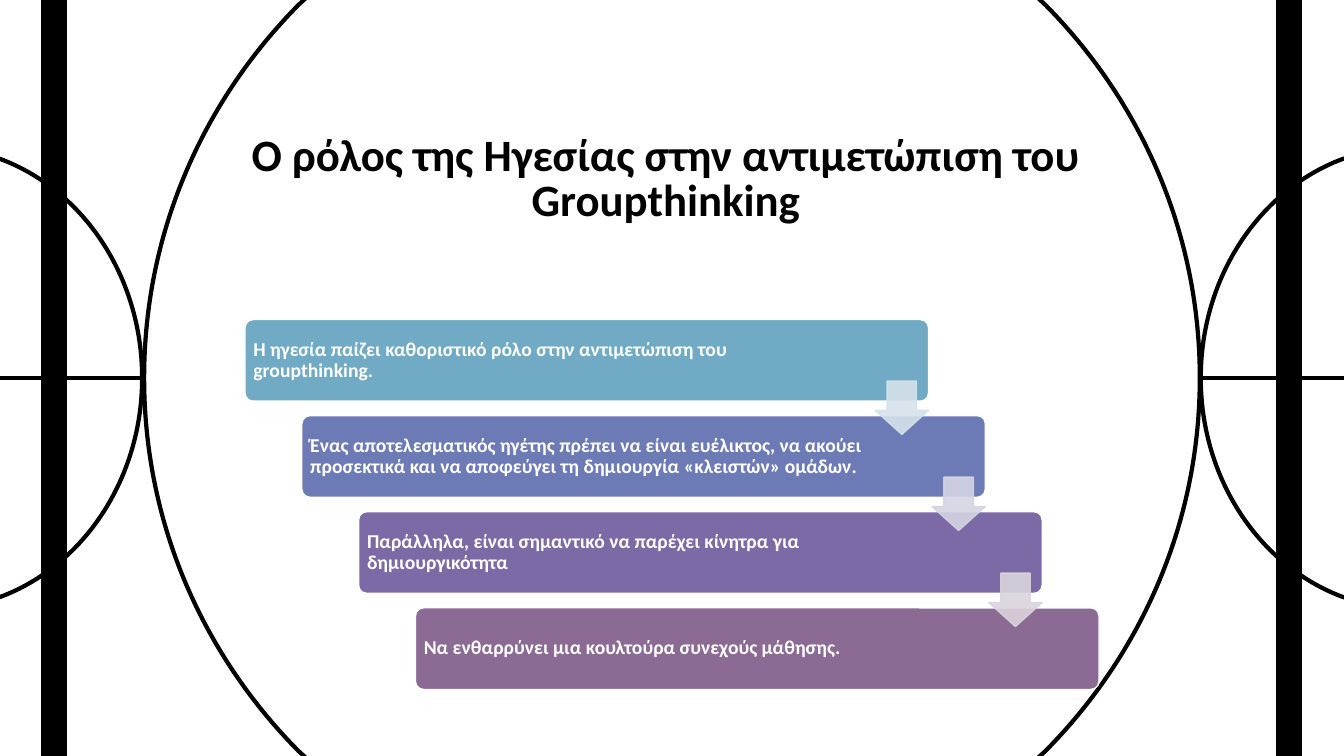
from dataclasses import dataclass

from lxml.etree import SubElement
from pptx import Presentation
from pptx.dml.color import RGBColor
from pptx.enum.shapes import MSO_CONNECTOR as Connector, MSO_SHAPE as Shape
from pptx.enum.text import MSO_ANCHOR as Anchor, MSO_AUTO_SIZE as AutoSize, PP_ALIGN as Align
from pptx.oxml.ns import qn
from pptx.util import Inches, Pt

Point = tuple[float, float]

COLORS = {
    "black": "000000", "white": "FFFFFF",
    "teal": "70AAC4", "blue": "6C7BB6", "purple": "7C6AA6", "plum": "8B6A94",
    "pale_teal": "D5E2EA", "pale_blue": "D5D4E3", "pale_purple": "DAD4DC",
}
FONT = "Calibri"
MIDDLE = 3.75
FIRST_LEFT, FIRST_TOP = 2.43, 3.17
LAST_LEFT, LAST_TOP = 4.12, 6.03


@dataclass
class Step:
    text: str
    fill: str
    arrow: str | None = None


@dataclass
class Outline:
    start: Point
    segments: list[list[Point]]

    def mirrored(self) -> "Outline":
        return Outline(mirror(self.start),
                       [[mirror(point) for point in segment] for segment in self.segments])


def mirror(point: Point) -> Point:
    return 13.32 - point[0], point[1]


STEPS = [
    Step("Η ηγεσία παίζει καθοριστικό ρόλο στην αντιμετώπιση του groupthinking.",
         "teal", "pale_teal"),
    Step("Ένας αποτελεσματικός ηγέτης πρέπει να είναι ευέλικτος, να ακούει προσεκτικά "
         "και να αποφεύγει τη δημιουργία «κλειστών» ομάδων.", "blue", "pale_blue"),
    Step("Παράλληλα, είναι σημαντικό να παρέχει κίνητρα για δημιουργικότητα",
         "purple", "pale_purple"),
    Step("Nα ενθαρρύνει μια κουλτούρα συνεχούς μάθησης.", "plum"),
]
SIDE_CIRCLE = Outline((-0.09, 1.55), [
    [(0.01, 1.58)],
    [(0.83, 1.89), (1.41, 2.75), (1.41, 3.75)],
    [(1.41, 4.75), (0.83, 5.61), (0.01, 5.92)],
    [(-0.09, 5.95)],
])
CENTER_CIRCLE = Outline((3.1, -0.08), [
    [(10.23, -0.08)],
    [(10.37, 0.05)],
    [(11.31, 1), (11.9, 2.3), (11.9, 3.75)],
    [(11.9, 5.2), (11.31, 6.5), (10.37, 7.45)],
    [(10.25, 7.56)],
    [(3.08, 7.56)],
    [(2.96, 7.45)],
    [(2.02, 6.5), (1.43, 5.2), (1.43, 3.75)],
    [(1.43, 2.3), (2.02, 1), (2.96, 0.05)],
])


def color(name: str) -> RGBColor:
    return RGBColor.from_string(COLORS[name])


def paint(shape, fill: str, line: str, opacity: int = 100) -> None:
    shape.shadow.inherit = False
    shape.fill.solid()
    shape.fill.fore_color.rgb = color(fill)
    shape.line.color.rgb = color(line)
    shape.line.width = Pt(1)
    if opacity < 100:
        for element in shape._element.spPr.iter(qn("a:srgbClr")):
            SubElement(element, qn("a:alpha")).set("val", str(opacity * 1000))


def write(frame, text: str, size: int, font_color: str, align: Align, spacing: float,
          insets: tuple[float, float, float, float]) -> None:
    frame.word_wrap = True
    frame.auto_size = AutoSize.NONE
    frame.vertical_anchor = Anchor.MIDDLE
    frame.margin_left, frame.margin_top, frame.margin_right, frame.margin_bottom = map(Inches, insets)
    paragraph = frame.paragraphs[0]
    paragraph.alignment = align
    paragraph.line_spacing = spacing
    run = paragraph.add_run()
    run.text = text
    run.font.name = FONT
    run.font.size = Pt(size)
    run.font.bold = True
    run.font.color.rgb = color(font_color)


def draw_bar(slide, left: float) -> None:
    bar = slide.shapes.add_shape(Shape.RECTANGLE, Inches(left), 0, Inches(0.25), Inches(7.5))
    paint(bar, "black", "black")


def draw_outline(slide, outline: Outline) -> None:
    builder = slide.shapes.build_freeform(*map(Inches, outline.start))
    builder.add_line_segments(
        [(Inches(x), Inches(y)) for segment in outline.segments for x, y in segment], close=True)
    curve = builder.convert_to_shape()
    lines = iter(list(curve._element.iter(qn("a:lnTo"))))
    for segment in outline.segments:
        first, *others = [next(lines) for _ in segment]
        if others:
            first.tag = qn("a:cubicBezTo")
        for other in others:
            first.append(other[0])
            other.getparent().remove(other)
    curve.shadow.inherit = False
    curve.fill.background()
    curve.line.color.rgb = color("black")
    curve.line.width = Pt(3)


def draw_halfway_line(slide, start: float, end: float) -> None:
    line = slide.shapes.add_connector(Connector.STRAIGHT, Inches(start), Inches(MIDDLE),
                                      Inches(end), Inches(MIDDLE))
    line.line.color.rgb = color("black")
    line.line.width = Pt(3)
    SubElement(line._element.spPr, qn("a:effectLst"))


def step_corner(index: int) -> Point:
    share = index / (len(STEPS) - 1)
    return (FIRST_LEFT + share * (LAST_LEFT - FIRST_LEFT),
            FIRST_TOP + share * (LAST_TOP - FIRST_TOP))


def draw_step(slide, index: int, step: Step) -> None:
    left, top = step_corner(index)
    box = slide.shapes.add_shape(Shape.ROUNDED_RECTANGLE, Inches(left), Inches(top),
                                 Inches(6.78), Inches(0.81))
    box.adjustments[0] = 0.1
    paint(box, step.fill, "white")
    write(box.text_frame, step.text, 14, "white", Align.LEFT, 0.9, (0.06, 0.06, 1.15, 0.06))


def draw_arrow(slide, index: int, fill: str) -> None:
    left, top = step_corner(index)
    arrow = slide.shapes.add_shape(Shape.DOWN_ARROW, Inches(left + 6.25), Inches(top + 0.61),
                                   Inches(0.53), Inches(0.53))
    arrow.adjustments[0], arrow.adjustments[1] = 0.55, 0.45
    paint(arrow, fill, fill, opacity=90)


def main() -> None:
    presentation = Presentation()
    presentation.slide_width, presentation.slide_height = Inches(13.33), Inches(7.5)
    slide = presentation.slides.add_slide(presentation.slide_layouts[5])

    for left in (0.41, 12.66):
        draw_bar(slide, left)
    for outline in (SIDE_CIRCLE, SIDE_CIRCLE.mirrored(), CENTER_CIRCLE):
        draw_outline(slide, outline)
    for start, end in ((1.41, 0), (13.33, 11.91)):
        draw_halfway_line(slide, start, end)

    title = slide.shapes.title
    title.left, title.top, title.width, title.height = map(Inches, (2.43, 0.58, 8.48, 2.42))
    write(title.text_frame, "Ο ρόλος της Ηγεσίας στην αντιμετώπιση του Groupthinking",
          32, "black", Align.CENTER, 0.85, (0, 0.07, 0.13, 0.07))

    for index, step in enumerate(STEPS):
        draw_step(slide, index, step)
    for index, step in enumerate(STEPS):
        if step.arrow:
            draw_arrow(slide, index, step.arrow)

    presentation.save("out.pptx")


if __name__ == "__main__":
    main()
